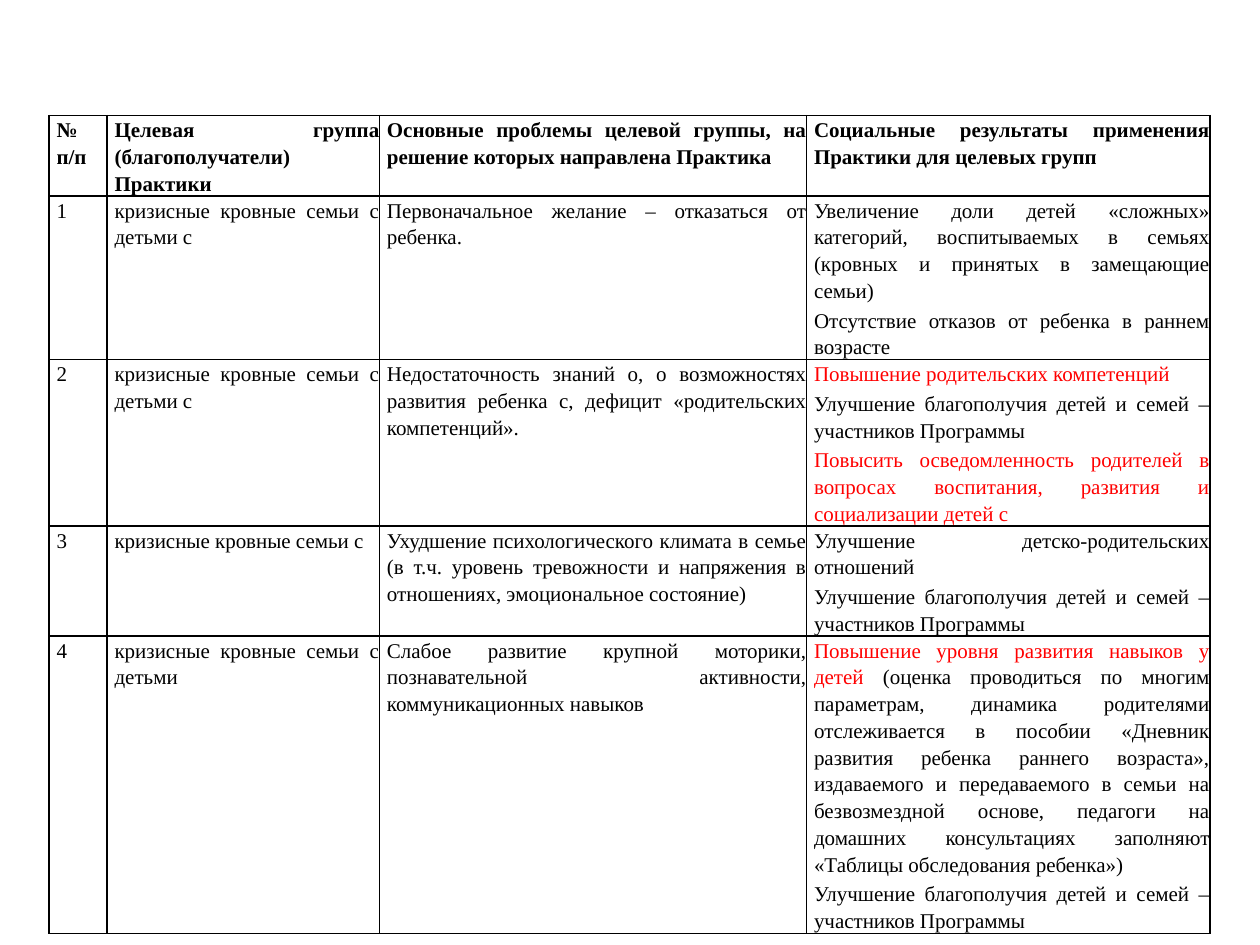
from pptx import Presentation
from pptx import util as u
from pptx.dml import color
from pptx.enum import text
from pptx.oxml import parse_xml
from pptx.oxml.ns import nsdecls

COLORS = {"text": "000000", "accent": "FF0000", "border": "000000"}
FONT = {"name": "Times New Roman", "size": u.Pt(12)}
PARAGRAPH = {"alignment": text.PP_ALIGN.JUSTIFY, "line_spacing": 1.15}
CELL = {"margin_left": 0, "margin_top": 0, "margin_right": 0, "margin_bottom": 0}
COLUMN_WIDTHS = [1.17, 5.49, 8.61, 8.13]
ROW_HEIGHTS = [1.45, 3.0, 3.05, 2.0, 5.49]

HEADERS = [
    "№ п/п",
    "Целевая группа (благополучатели) Практики",
    "Основные проблемы целевой группы, на решение которых направлена Практика",
    "Социальные результаты применения Практики для целевых групп",
]
WELLBEING = [("Улучшение благополучия детей и семей – участников Программы", "text")]

# Target group, problem, results; each result is a list of (text, colour) runs
PRACTICES = [
    ("кризисные кровные семьи с детьми с",
     "Первоначальное желание – отказаться от ребенка.",
     [[("Увеличение доли детей «сложных» категорий, воспитываемых в семьях "
        "(кровных и принятых в замещающие семьи)", "text")],
      [("Отсутствие отказов от ребенка в раннем возрасте", "text")]]),
    ("кризисные кровные семьи с детьми c",
     "Недостаточность знаний о, о возможностях развития ребенка с, "
     "дефицит «родительских компетенций».",
     [[("Повышение родительских компетенций", "accent")],
      WELLBEING,
      [("Повысить осведомленность родителей в вопросах воспитания, "
        "развития и социализации детей с", "accent")]]),
    ("кризисные кровные семьи с",
     "Ухудшение психологического климата в семье (в т.ч. уровень тревожности "
     "и напряжения в отношениях, эмоциональное состояние)",
     [[("Улучшение детско-родительских отношений", "text")],
      WELLBEING]),
    ("кризисные кровные семьи с детьми",
     "Слабое развитие крупной моторики, познавательной активности, "
     "коммуникационных навыков",
     [[("Повышение уровня развития навыков у детей ", "accent"),
       ("(оценка проводиться по многим параметрам, динамика родителями "
        "отслеживается в пособии «Дневник развития ребенка раннего возраста», "
        "издаваемого и передаваемого в семьи на безвозмездной основе, педагоги "
        "на домашних консультациях заполняют «Таблицы обследования ребенка»)",
        "text")],
      WELLBEING]),
]


def set_format(obj, values):
    for name, value in values.items():
        setattr(obj, name, value)


def add_borders(cell):
    tc_pr = cell._tc.get_or_add_tcPr()
    for side in ("lnL", "lnR", "lnT", "lnB"):
        tc_pr.append(parse_xml(
            f'<a:{side} {nsdecls("a")} w="{u.Pt(1)}"><a:solidFill>'
            f'<a:srgbClr val="{COLORS["border"]}"/></a:solidFill></a:{side}>'))


def fill_cell(cell, paragraphs, bold):
    set_format(cell, CELL)
    add_borders(cell)
    cell.fill.background()
    tf = cell.text_frame
    for i, runs in enumerate(paragraphs):
        p = tf.add_paragraph() if i else tf.paragraphs[0]
        set_format(p, PARAGRAPH)
        p._p.get_or_add_pPr().set("marL", str(u.Cm(0.15)))
        if i:
            p.space_before = u.Pt(1.6)
        for content, tone in runs:
            r = p.add_run()
            r.text = content
            set_format(r.font, {**FONT, "bold": bold})
            r.font.color.rgb = color.RGBColor.from_string(COLORS[tone])


def add_practice_table(s, left, top):
    rows = [[[[(header, "text")]] for header in HEADERS]]
    for number, (group, problem, results) in enumerate(PRACTICES, 1):
        rows.append([[[(value, "text")]] for value in (str(number), group, problem)]
                    + [results])
    table = s.shapes.add_table(
        len(rows), len(HEADERS), u.Cm(left), u.Cm(top),
        u.Cm(sum(COLUMN_WIDTHS)), u.Cm(sum(ROW_HEIGHTS))).table
    set_format(table, {"first_row": False, "horz_banding": False})
    for column, width in zip(table.columns, COLUMN_WIDTHS):
        column.width = u.Cm(width)
    for i, (row, height, contents) in enumerate(zip(table.rows, ROW_HEIGHTS, rows)):
        row.height = u.Cm(height)
        for cell, paragraphs in zip(row.cells, contents):
            fill_cell(cell, paragraphs, bold=i == 0)


def main():
    prs = Presentation()
    set_format(prs, {"slide_width": u.Cm(25.4), "slide_height": u.Cm(19.05)})
    s = prs.slides.add_slide(prs.slide_layouts[6])
    add_practice_table(s, 0.99, 2.33)
    prs.save("out.pptx")


if __name__ == "__main__":
    main()
